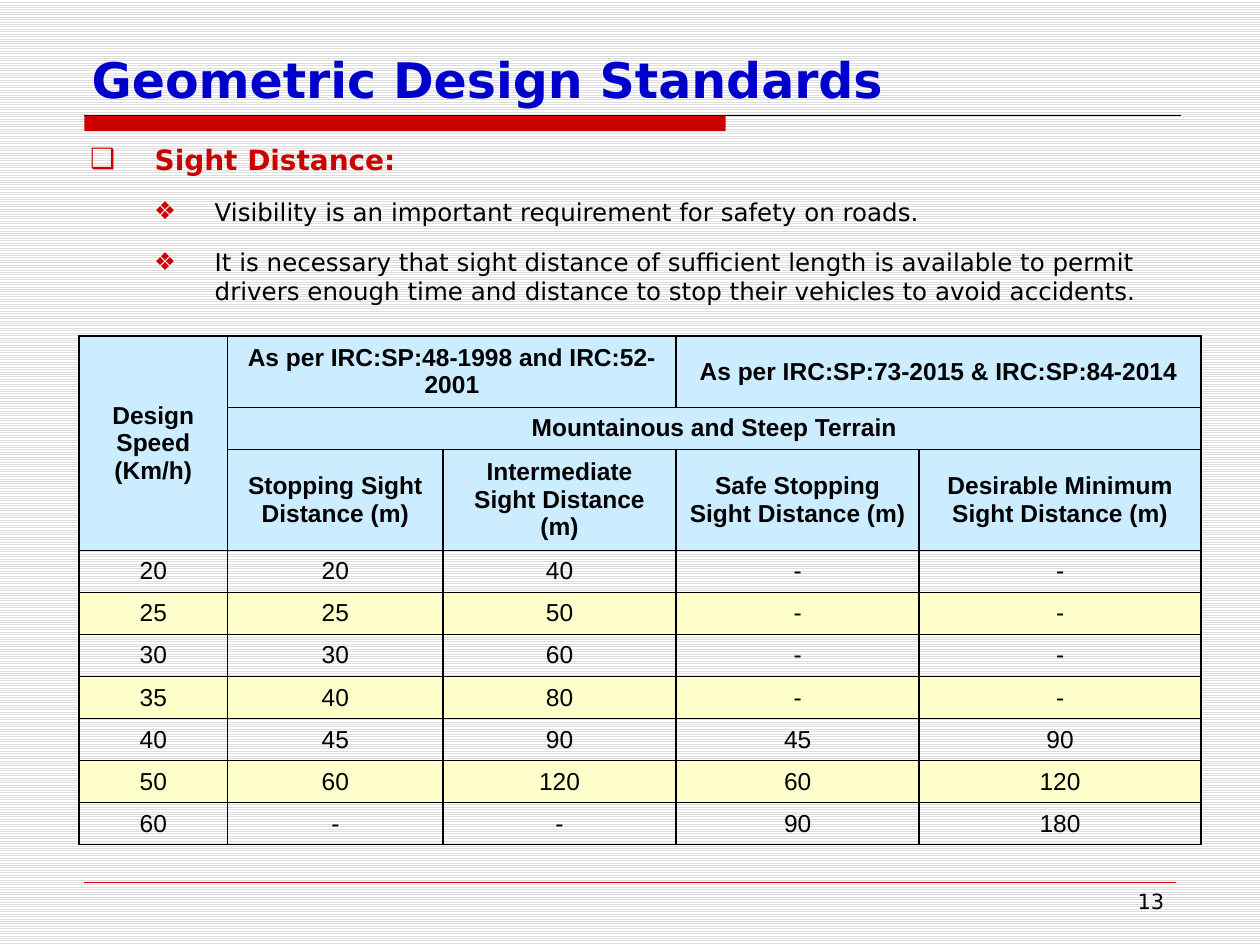
from lxml.etree import SubElement
from pptx import Presentation
from pptx.dml.color import RGBColor
from pptx.enum.dml import MSO_PATTERN
from pptx.enum.shapes import MSO_CONNECTOR, MSO_SHAPE
from pptx.enum.text import MSO_ANCHOR as Anchor, PP_ALIGN as Align
from pptx.oxml.ns import qn
from pptx.util import Cm, Pt

BLACK = RGBColor(0x00, 0x00, 0x00)
WHITE = RGBColor(0xFF, 0xFF, 0xFF)
GREY = RGBColor(0xDD, 0xDD, 0xDD)
RED = RGBColor(0xCC, 0x00, 0x00)
BLUE = RGBColor(0x00, 0x00, 0xCC)
PALE_BLUE = RGBColor(0xCC, 0xEC, 0xFF)
PALE_YELLOW = RGBColor(0xFF, 0xFF, 0xCC)
BODY_FONT = "DejaVu Sans"
TABLE_FONT = "Arial"

COLUMN_WIDTHS = [3.0, 4.34, 4.7, 4.9, 5.68]
HEADER_HEIGHTS = [1.36, 0.82, 1.92]
DATA_HEIGHT = 0.81
HEADERS = [
    (0, 0, 2, 0, "Design Speed (Km/h)"),
    (0, 1, 0, 2, "As per IRC:SP:48-1998 and IRC:52- 2001"),
    (0, 3, 0, 4, "As per IRC:SP:73-2015 & IRC:SP:84-2014"),
    (1, 1, 1, 4, "Mountainous and Steep Terrain"),
    (2, 1, 2, 1, "Stopping Sight Distance (m)"),
    (2, 2, 2, 2, "Intermediate Sight Distance (m)"),
    (2, 3, 2, 3, "Safe Stopping Sight Distance (m)"),
    (2, 4, 2, 4, "Desirable Minimum Sight Distance (m)"),
]
SIGHT_DISTANCES = [
    ("20", "20", "40", "-", "-"),
    ("25", "25", "50", "-", "-"),
    ("30", "30", "60", "-", "-"),
    ("35", "40", "80", "-", "-"),
    ("40", "45", "90", "45", "90"),
    ("50", "60", "120", "60", "120"),
    ("60", "-", "-", "90", "180"),
]


def write(paragraph, text, size=14, font=BODY_FONT, color=BLACK, bold=False, align=Align.LEFT):
    paragraph.alignment = align
    run = paragraph.add_run()
    run.text = text
    run.font.size = Pt(size)
    run.font.name = font
    run.font.bold = bold
    run.font.color.rgb = color


def add_text_frame(slide, left, top, width, height, anchor=Anchor.TOP):
    box = slide.shapes.add_textbox(Cm(left), Cm(top), Cm(width), Cm(height))
    frame = box.text_frame
    frame.word_wrap = True
    frame.vertical_anchor = anchor
    return frame


def set_bullet(paragraph, character, indent, hanging):
    paragraph.space_before = Pt(12)
    properties = paragraph._p.get_or_add_pPr()
    properties.set("marL", str(Cm(indent)))
    properties.set("indent", str(-Cm(hanging)))
    color = SubElement(properties, qn("a:buClr"))
    SubElement(color, qn("a:srgbClr"), val=str(RED))
    SubElement(properties, qn("a:buFont"), typeface=BODY_FONT)
    SubElement(properties, qn("a:buChar"), char=character)


def add_rule(slide, left, right, top, color, weight):
    rule = slide.shapes.add_connector(MSO_CONNECTOR.STRAIGHT, Cm(left), Cm(top), Cm(right), Cm(top))
    rule.line.color.rgb = color
    rule.line.width = Pt(weight)
    SubElement(rule._element.spPr, qn("a:effectLst"))


def add_bar(slide, left, top, width, height):
    bar = slide.shapes.add_shape(MSO_SHAPE.RECTANGLE, Cm(left), Cm(top), Cm(width), Cm(height))
    bar.shadow.inherit = False
    bar.fill.solid()
    bar.fill.fore_color.rgb = RED
    bar.line.fill.background()


def add_bullets(slide):
    frame = add_text_frame(slide, 1.57, 2.74, 22.22, 3.81)
    heading = frame.paragraphs[0]
    write(heading, "Sight Distance:", size=16, color=RED, bold=True)
    set_bullet(heading, "❑", 1.3, 1.3)
    for text in (
        "Visibility is an important requirement for safety on roads.",
        "It is necessary that sight distance of sufficient length is available to permit "
        "drivers enough time and distance to stop their vehicles to avoid accidents.",
    ):
        point = frame.add_paragraph()
        point.level = 1
        write(point, text)
        set_bullet(point, "❖", 2.51, 1.22)


def style_cell(cell, fill):
    properties = cell._tc.get_or_add_tcPr()
    for side in ("a:lnL", "a:lnR", "a:lnT", "a:lnB"):
        border = SubElement(properties, qn(side), w=str(Pt(1)))
        color = SubElement(SubElement(border, qn("a:solidFill")), qn("a:srgbClr"))
        color.set("val", str(BLACK))
    if fill is None:
        cell.fill.background()
    else:
        cell.fill.solid()
        cell.fill.fore_color.rgb = fill
    cell.vertical_anchor = Anchor.MIDDLE


def fill_cell(cell, text, bold=False):
    write(cell.text_frame.paragraphs[0], text, font=TABLE_FONT, bold=bold, align=Align.CENTER)


def add_distance_table(slide):
    heights = HEADER_HEIGHTS + [DATA_HEIGHT] * len(SIGHT_DISTANCES)
    frame = slide.shapes.add_table(
        len(heights), len(COLUMN_WIDTHS), Cm(1.59), Cm(6.77), Cm(sum(COLUMN_WIDTHS)), Cm(sum(heights))
    )
    table = frame.table
    table.first_row = False
    table.horz_banding = False
    for column, width in zip(table.columns, COLUMN_WIDTHS):
        column.width = Cm(width)
    for index, (row, height) in enumerate(zip(table.rows, heights)):
        row.height = Cm(height)
        data_fill = PALE_YELLOW if index % 2 == 0 else None
        for cell in row.cells:
            style_cell(cell, PALE_BLUE if index < len(HEADER_HEIGHTS) else data_fill)
    for top, left, bottom, right, text in HEADERS:
        cell = table.cell(top, left)
        if (top, left) != (bottom, right):
            cell.merge(table.cell(bottom, right))
        fill_cell(cell, text, bold=True)
    for row_index, values in enumerate(SIGHT_DISTANCES, len(HEADER_HEIGHTS)):
        for column_index, value in enumerate(values):
            fill_cell(table.cell(row_index, column_index), value)


def set_background(slide):
    fill = slide.background.fill
    fill.patterned()
    fill.pattern = MSO_PATTERN.LIGHT_HORIZONTAL
    fill.fore_color.rgb = GREY
    fill.back_color.rgb = WHITE


def main():
    presentation = Presentation()
    presentation.slide_width = Cm(25.4)
    presentation.slide_height = Cm(19.05)
    slide = presentation.slides.add_slide(presentation.slide_layouts[6])
    set_background(slide)
    add_rule(slide, 1.7, 23.8, 2.33, BLACK, 0.75)
    add_bar(slide, 1.7, 2.33, 12.93, 0.31)
    add_rule(slide, 1.7, 23.7, 17.78, RED, 0.25)
    title = add_text_frame(slide, 1.6, 0.84, 22.22, 1.47, anchor=Anchor.BOTTOM)
    write(title.paragraphs[0], "Geometric Design Standards", size=28, color=BLUE, bold=True)
    add_bullets(slide)
    number = add_text_frame(slide, 18.21, 17.78, 5.51, 0.89)
    write(number.paragraphs[0], "13", size=12, align=Align.RIGHT)
    add_distance_table(slide)
    presentation.save("out.pptx")


if __name__ == "__main__":
    main()
